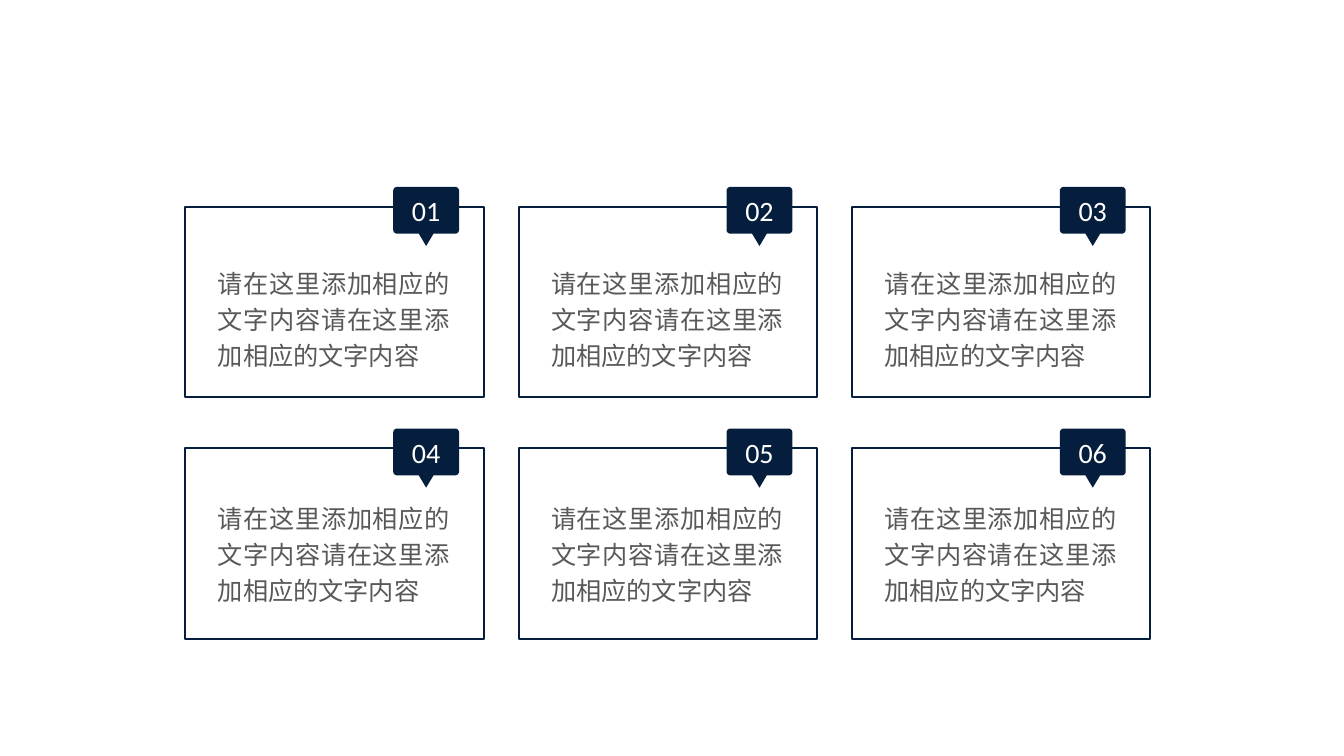
from dataclasses import dataclass
from math import cos, radians, sin

from pptx import Presentation
from pptx.dml.color import RGBColor
from pptx.enum.shapes import MSO_SHAPE
from pptx.enum.text import MSO_ANCHOR, MSO_AUTO_SIZE, PP_ALIGN
from pptx.util import Cm, Pt


@dataclass(frozen=True)
class Theme:
    navy: RGBColor = RGBColor(0x05, 0x1E, 0x3D)
    grey: RGBColor = RGBColor(0x59, 0x59, 0x59)
    white: RGBColor = RGBColor(0xFF, 0xFF, 0xFF)
    number_font: str = "Calibri"
    body_font: str = "Arial"
    number_size: Pt = Pt(20)
    body_size: Pt = Pt(18)
    outline: Pt = Pt(1.5)


theme = Theme()

BODY = "请在这里添加相应的文字内容请在这里添加相应的文字内容"
COLUMNS, ROWS = 3, 2
LEFT, TOP = 4.67, 5.21
PITCH_X, PITCH_Y, TEXT_PITCH_Y = 8.4, 6.09, 5.92
CARD_W, CARD_H = 7.52, 4.8
BADGE_W, BADGE_H, RADIUS = 1.66, 1.18, 0.1
POINTER_W, POINTER_H = 0.37, 0.31


def add_badge(shapes, left, top):
    """Draw a rounded label with a small pointer below its middle."""
    right, bottom, middle = left + BADGE_W, top + BADGE_H, left + BADGE_W / 2
    corners = [
        (right - RADIUS, top + RADIUS, -90),
        (right - RADIUS, bottom - RADIUS, 0),
        (left + RADIUS, bottom - RADIUS, 90),
        (left + RADIUS, top + RADIUS, 180),
    ]
    arcs = [
        [(x + RADIUS * cos(radians(start + turn)), y + RADIUS * sin(radians(start + turn)))
         for turn in range(0, 91, 15)]
        for x, y, start in corners
    ]
    pointer = [(middle + POINTER_W / 2, bottom), (middle, bottom + POINTER_H),
               (middle - POINTER_W / 2, bottom)]
    outline = [(Cm(x), Cm(y)) for x, y in arcs[0] + arcs[1] + pointer + arcs[2] + arcs[3]]
    builder = shapes.build_freeform(*outline[0])
    builder.add_line_segments(outline[1:], close=True)
    return builder.convert_to_shape()


prs = Presentation()
prs.slide_width, prs.slide_height = Cm(33.87), Cm(19.05)
s = prs.slides.add_slide(prs.slide_layouts[6])

for i in range(COLUMNS * ROWS):
    row, column = divmod(i, COLUMNS)
    x, y = LEFT + column * PITCH_X, TOP + row * PITCH_Y

    card = s.shapes.add_shape(MSO_SHAPE.RECTANGLE, Cm(x), Cm(y), Cm(CARD_W), Cm(CARD_H))
    card.shadow.inherit = False
    card.fill.background()
    card.line.color.rgb = theme.navy
    card.line.width = theme.outline

    badge = add_badge(s.shapes, x + 5.24, y - 0.5)
    badge.shadow.inherit = False
    badge.fill.solid()
    badge.fill.fore_color.rgb = theme.navy
    badge.line.fill.background()
    tf = badge.text_frame
    tf.margin_left = tf.margin_top = tf.margin_right = 0
    tf.margin_bottom = Cm(0.3)
    tf.vertical_anchor = MSO_ANCHOR.MIDDLE
    p = tf.paragraphs[0]
    p.text = f"{i + 1:02}"
    p.alignment = PP_ALIGN.CENTER
    p.font.name = theme.number_font
    p.font.size = theme.number_size
    p.font.color.rgb = theme.white

    body = s.shapes.add_textbox(Cm(x + 0.57), Cm(TOP + 1.27 + row * TEXT_PITCH_Y),
                                Cm(6.35), Cm(3.02))
    tf = body.text_frame
    tf.word_wrap = True
    tf.auto_size = MSO_AUTO_SIZE.SHAPE_TO_FIT_TEXT
    p = tf.paragraphs[0]
    p.text = BODY
    p.alignment = PP_ALIGN.JUSTIFY
    p.line_spacing = 1.2
    p.font.name = theme.body_font
    p.font.size = theme.body_size
    p.font.color.rgb = theme.grey

prs.save("out.pptx")
